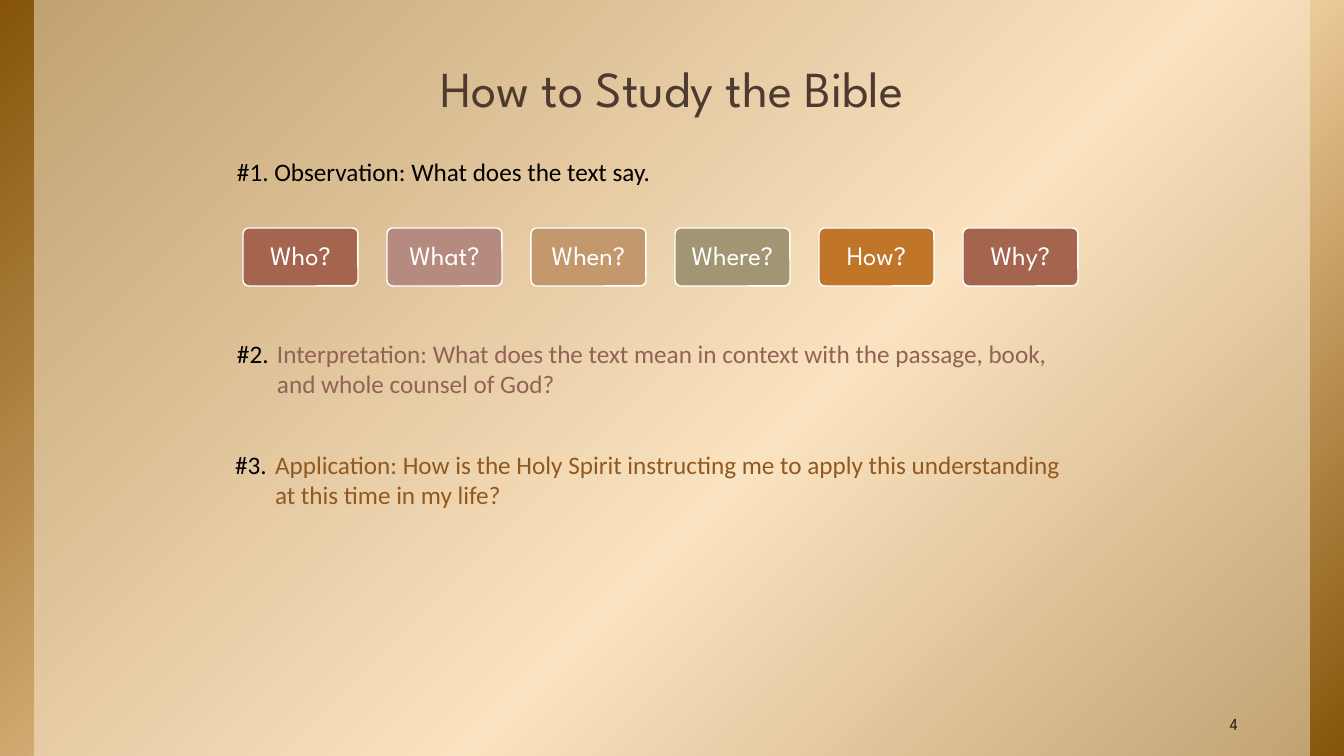
from copy import deepcopy

from lxml import etree
from pptx import Presentation
from pptx.dml.color import RGBColor
from pptx.enum.shapes import MSO_SHAPE
from pptx.enum.text import MSO_ANCHOR, MSO_AUTO_SIZE, PP_ALIGN
from pptx.oxml.ns import qn
from pptx.util import Pt

PX = 914400 / 100.8
WIDTH, HEIGHT = 1344, 756
RECT, ROUNDED = MSO_SHAPE.RECTANGLE, MSO_SHAPE.ROUNDED_RECTANGLE
LEFT, CENTER, RIGHT = PP_ALIGN.LEFT, PP_ALIGN.CENTER, PP_ALIGN.RIGHT
TOP, MIDDLE, BOTTOM = MSO_ANCHOR.TOP, MSO_ANCHOR.MIDDLE, MSO_ANCHOR.BOTTOM
NO_FIT = MSO_AUTO_SIZE.NONE
HEADING_FONT, BODY_FONT = "League Spartan", "Calibri"
TITLE_ONLY = 5

QUESTIONS = [
    ("Who?", "A5644E"),
    ("What?", "B58B80"),
    ("When?", "C3986D"),
    ("Where?", "A19574"),
    ("How?", "C17529"),
    ("Why?", "A5644E"),
]


def px(length):
    return round(length * PX)


def color(hex_string):
    return RGBColor.from_string(hex_string)


class StudySlide:
    def __init__(self, deck):
        self.slide = deck.slides.add_slide(deck.slide_layouts[TITLE_ONLY])

    def shape(self, kind, box, fill=None):
        shape = self.slide.shapes.add_shape(kind, *map(px, box))
        shape.shadow.inherit = False
        shape.line.fill.background()
        if fill:
            shape.fill.solid()
            shape.fill.fore_color.rgb = color(fill)
        return shape

    def gradient(self, box, stops):
        backdrop = self.shape(RECT, box)
        backdrop.fill.gradient()
        backdrop.fill.gradient_angle = 315
        stop_list = backdrop._element.spPr.find(".//" + qn("a:gsLst"))
        stop_list.append(deepcopy(stop_list[0]))
        for stop, (position, shade) in zip(backdrop.fill.gradient_stops, stops):
            stop.position = position
            stop.color.rgb = color(shade)

    def veil(self, box, fill, opacity):
        panel = self.shape(RECT, box, fill)
        tint = panel._element.spPr.find(".//" + qn("a:srgbClr"))
        etree.SubElement(tint, qn("a:alpha")).set("val", str(opacity * 1000))

    def fill_text(self, holder, parts, size, font, align=LEFT, anchor=TOP,
                  insets=(10, 5), spacing=None, hanging=0):
        frame = holder.text_frame
        frame.word_wrap = True
        frame.auto_size = NO_FIT
        frame.vertical_anchor = anchor
        frame.margin_left = frame.margin_right = px(insets[0])
        frame.margin_top = frame.margin_bottom = px(insets[1])
        paragraph = frame.paragraphs[0]
        paragraph.alignment = align
        if spacing:
            paragraph.line_spacing = spacing
        if hanging:
            properties = paragraph._p.get_or_add_pPr()
            properties.set("marL", str(px(hanging)))
            properties.set("indent", str(-px(hanging)))
        for words, shade in parts:
            run = paragraph.add_run()
            run.text = words
            run.font.size = Pt(size)
            run.font.name = font
            run.font.color.rgb = color(shade)

    def title(self, box, words):
        heading = self.slide.shapes.title
        heading.left, heading.top, heading.width, heading.height = map(px, box)
        self.slide.shapes._spTree.append(heading._element)
        self.fill_text(heading, [(words, "4E3B30")], 36, HEADING_FONT,
                       CENTER, BOTTOM, (13, 7), 0.85)

    def text(self, box, parts, size=18, font=BODY_FONT, **layout):
        holder = self.slide.shapes.add_textbox(*map(px, box))
        self.fill_text(holder, parts, size, font, **layout)

    def question(self, box, words, fill):
        tile = self.shape(ROUNDED, box, fill)
        tile.adjustments[0] = 0.1
        tile.line.color.rgb = color("FFFFFF")
        tile.line.width = Pt(1)
        self.fill_text(tile, [(words, "FFFFFF")], 19, HEADING_FONT,
                       CENTER, MIDDLE, (5, 4), 0.9)


def main():
    deck = Presentation()
    deck.slide_width, deck.slide_height = px(WIDTH), px(HEIGHT)
    study = StudySlide(deck)

    study.gradient((0, 0, WIDTH, HEIGHT),
                   [(0, "85540A"), (0.58, "F9DAAB"), (1, "85540A")])
    study.veil((34, 0, 1276, HEIGHT), "FCECD5", 50)
    study.title((89, 39, 1166, 86), "How to Study the Bible")
    study.text((949, 701, 302, 40), [("4", "271E18")], 12, HEADING_FONT,
               align=RIGHT, anchor=BOTTOM, insets=(13, 7))

    for column, (words, fill) in enumerate(QUESTIONS):
        study.question((243 + 144 * column, 228, 115, 58), words, fill)

    study.text((227, 151, 865, 40),
               [("#1. Observation: What does the text say.", "000000")])
    study.text((227, 333, 867, 72), [
        ("#2.\t", "000000"),
        ("Interpretation: What does the text mean in context with the "
         "passage, book, and whole counsel of God?", "926255"),
    ], hanging=40)
    study.text((225, 444, 867, 72), [
        ("#3.\t", "000000"),
        ("Application: How is the Holy Spirit instructing me to apply this "
         "understanding at this time in my life?", "91581F"),
    ], hanging=40)

    deck.save("out.pptx")


if __name__ == "__main__":
    main()
